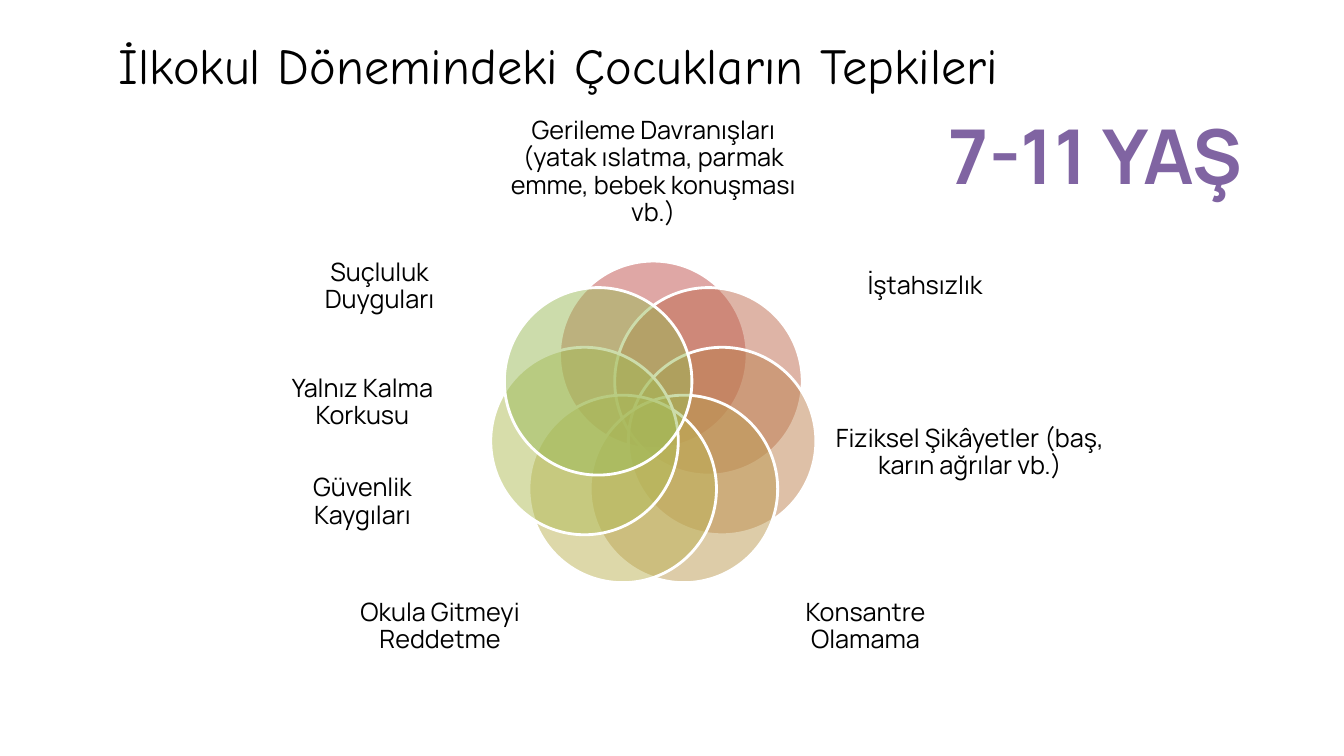
from dataclasses import dataclass
from math import cos, pi, sin

from lxml.etree import SubElement
from pptx import Presentation
from pptx.dml.color import RGBColor
from pptx.enum.shapes import MSO_SHAPE
from pptx.enum.text import MSO_ANCHOR, MSO_AUTO_SIZE, PP_ALIGN
from pptx.oxml.ns import qn
from pptx.shapes.base import BaseShape
from pptx.slide import Slide
from pptx.text.text import TextFrame
from pptx.util import Emu, Pt

SCALE = 9144  # EMU per px, 100 px to the inch


@dataclass
class Label:
    left: int
    top: int
    width: int
    height: int
    lines: tuple[str, ...]


@dataclass
class Petal:
    color: str
    label: Label


# Petals run clockwise from the top of the ring
PETALS = [
    Petal("C0504D", Label(493, 114, 310, 114, (
        "Gerileme Davranışları (yatak ıslatma, parmak emme, bebek konuşması vb.)",))),
    Petal("BF6A4F", Label(817, 222, 201, 125, ("İştahsızlık",))),
    Petal("BE8351", Label(825, 382, 274, 134, (
        "Fiziksel Şikâyetler (baş, karın ağrılar vb.)",))),
    Petal("BD9B53", Label(752, 561, 213, 122, ("Konsantre Olamama",))),
    Petal("BDB255", Label(330, 561, 213, 122, ("Okula Gitmeyi Reddetme",))),
    Petal("B1BC57", Label(261, 382, 197, 134, (
        "Yalnız Kalma Korkusu", "Güvenlik Kaygıları"))),
    Petal("9BBB59", Label(276, 222, 201, 125, ("Suçluluk Duyguları",))),
]
MID_X, MID_Y, RING, SIZE = 648, 422, 70, 186

BODY = {"name": "Manrope", "size": Pt(18), "bold": False}
AGE = {"name": "Manrope", "size": Pt(54), "bold": True}
HEAD = {"name": "Comic Neue", "size": Pt(36), "bold": False}
BARE = {"margin_left": 0, "margin_right": 0, "margin_top": 0, "margin_bottom": 0,
        "word_wrap": True, "vertical_anchor": MSO_ANCHOR.MIDDLE}
FREE = {"word_wrap": False, "vertical_anchor": MSO_ANCHOR.TOP,
        "auto_size": MSO_AUTO_SIZE.NONE}


def px(count: float) -> Emu:
    return Emu(round(count * SCALE))


def rgb(code: str) -> RGBColor:
    return RGBColor.from_string(code)


def apply(target: object, style: dict) -> None:
    for key, value in style.items():
        setattr(target, key, value)


def place(shape: BaseShape, left: int, top: int, width: int, height: int) -> None:
    apply(shape, {"left": px(left), "top": px(top),
                  "width": px(width), "height": px(height)})


def write(frame: TextFrame, lines: tuple[str, ...], font: dict, color: str,
          form: dict, para: dict) -> None:
    apply(frame, form)
    for i, line in enumerate(lines):
        item = frame.add_paragraph() if i else frame.paragraphs[0]
        item.text = line
        apply(item, para)
        if i:
            item.space_before = Pt(32)
        apply(item.font, font)
        item.font.color.rgb = rgb(color)


def draw_petal(slide: Slide, index: int, color: str) -> None:
    angle = 2 * pi * index / len(PETALS)
    left = MID_X + RING * sin(angle) - SIZE / 2
    top = MID_Y - RING * cos(angle) - SIZE / 2
    disc = slide.shapes.add_shape(MSO_SHAPE.OVAL, px(left), px(top), px(SIZE), px(SIZE))
    disc.shadow.inherit = False
    disc.fill.solid()
    disc.fill.fore_color.rgb = rgb(color)
    tint = disc.fill._xPr.find(qn("a:solidFill"))[0]
    SubElement(tint, qn("a:alpha")).set("val", "50000")
    disc.line.color.rgb = rgb("FFFFFF")
    disc.line.width = Pt(2)


def draw_label(slide: Slide, label: Label) -> None:
    box = slide.shapes.add_textbox(0, 0, 0, 0)
    place(box, label.left, label.top, label.width, label.height)
    write(box.text_frame, label.lines, BODY, "000000", BARE,
          {"alignment": PP_ALIGN.CENTER, "line_spacing": 0.9})


def main() -> None:
    deck = Presentation()
    apply(deck, {"slide_width": px(1333), "slide_height": px(750)})
    slide = deck.slides.add_slide(deck.slide_layouts[5])

    # Title
    title = slide.shapes.title
    place(title, 108, 29, 929, 71)
    write(title.text_frame, ("İlkokul Dönemindeki Çocukların Tepkileri",), HEAD,
          "000000", FREE, {"alignment": PP_ALIGN.LEFT})

    # Ring of petals and their labels
    for index, petal in enumerate(PETALS):
        draw_petal(slide, index, petal.color)
        draw_label(slide, petal.label)

    # Age range
    age = slide.shapes.add_textbox(0, 0, 0, 0)
    place(age, 919, 103, 335, 101)
    write(age.text_frame, ("7-11 YAŞ",), AGE, "8064A2", FREE,
          {"alignment": PP_ALIGN.CENTER})

    deck.save("out.pptx")


if __name__ == "__main__":
    main()
